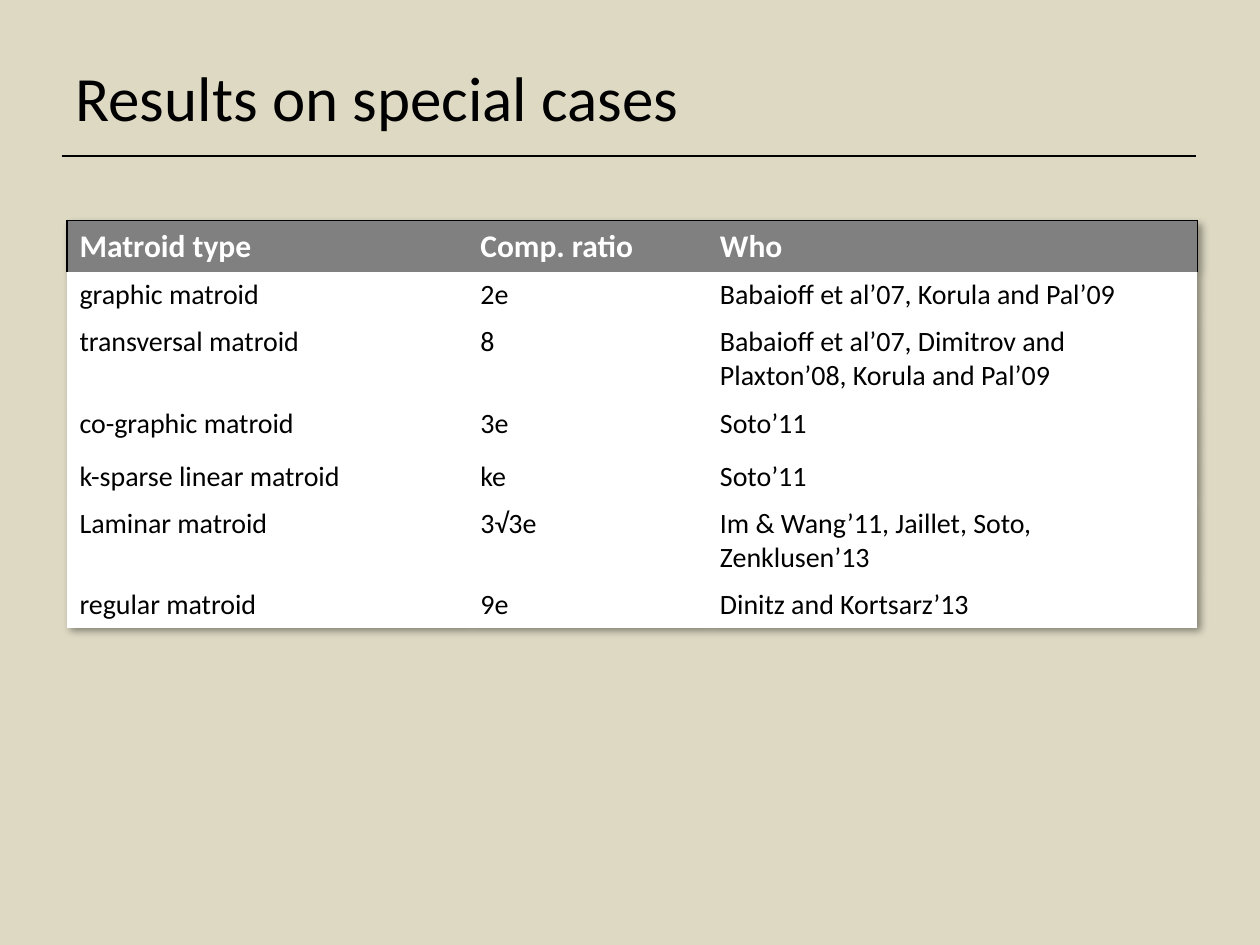
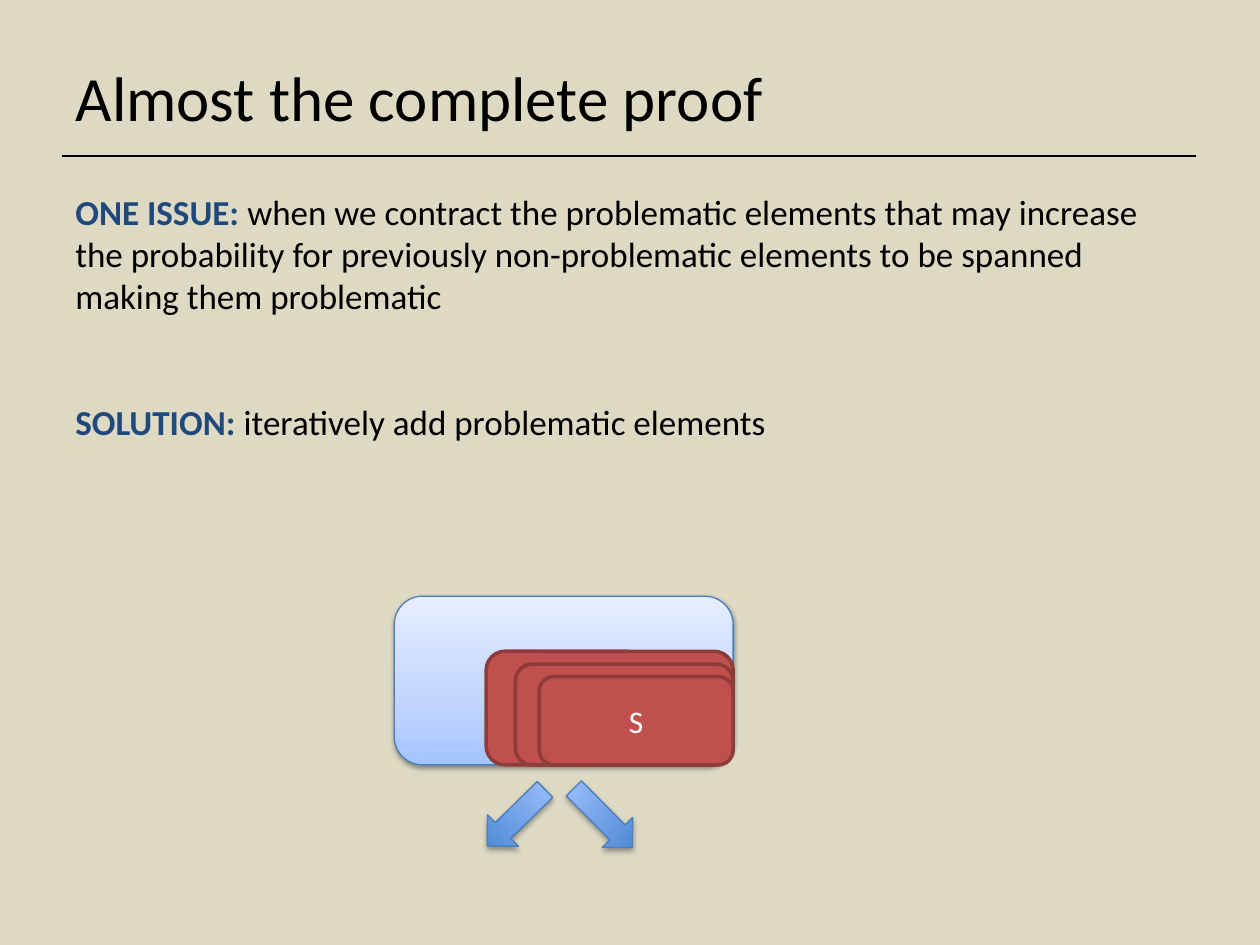
from dataclasses import dataclass

from lxml import etree
from pptx import Presentation
from pptx import util as u
from pptx.dml import color as dc
from pptx.enum import shapes as es, text as et
from pptx.oxml import ns

Cm, Pt = u.Cm, u.Pt
FONT = "Calibri"
HUES = {
    "sand": "DDD9C3", "ink": "000000", "white": "FFFFFF", "grey": "808080",
    "navy": "1F497D", "edge": "4B7EBC", "red": "C0504D", "rim": "8E3B39",
    "pale": "E6EEFF", "mist": "BFD4FF", "sky": "A4C4FF", "blue": "3F80CE",
}
PLAIN = "{2D5ABB26-0587-4C30-8999-92F81FD0307C}"  # table style without grid


@dataclass(frozen=True)
class Shade:
    alpha: int
    blur: float
    dist: float
    angle: int


@dataclass(frozen=True)
class Look:
    stops: tuple
    line: str
    width: float
    shade: Shade | None = None


@dataclass(frozen=True)
class Box:
    wide: float
    high: float
    look: Look
    text: str = ""


@dataclass(frozen=True)
class Arrow:
    left: float
    top: float
    wide: float
    high: float
    turn: float


# Looks of the diagram parts
GROUND = Look(((0, "sky"), (35, "mist"), (100, "pale")), "edge", 0.75,
              Shade(38, 3.1, 1.6, 90))
POINTER = Look(((0, "blue"), (100, "sky")), "edge", 0.75,
               Shade(35, 3.1, 1.8, 90))
LAYER = Look(((0, "red"),), "rim", 2)

# Content
HEAD = ("Matroid type", "Comp. ratio", "Who")
CASES = (
    ("graphic matroid", "2e", "Babaioff et al’07, Korula and Pal’09"),
    ("transversal matroid", "8",
     "Babaioff et al’07, Dimitrov and Plaxton’08, Korula and Pal’09"),
    ("co-graphic matroid", "3e", "Soto’11"),
    ("k-sparse linear matroid", "ke", "Soto’11"),
    ("Laminar matroid", "3√3e", "Im & Wang’11, Jaillet, Soto, Zenklusen’13"),
    ("regular matroid", "9e", "Dinitz and Kortsarz’13"),
)
COLS = (8.08, 4.83, 9.88)
ROWS = (1.03, 0.94, 1.64, 1.07, 0.94, 1.64, 0.94)
POINTS = (
    ("ONE ISSUE:", " when we contract the problematic elements that may "
     "increase the probability for previously non-problematic elements to be "
     "spanned making them problematic"),
    ("SOLUTION:", " iteratively add problematic elements"),
)
CORNER = (14.78, 15.42)  # right and bottom edge shared by the nested boxes
NEST = (Box(6.83, 3.4, GROUND), Box(4.98, 2.29, LAYER),
        Box(4.39, 2.03, LAYER), Box(3.91, 1.78, LAYER, "S"))
ARROWS = (Arrow(9.96, 15.67, 0.89, 1.63, 45.7),
          Arrow(11.73, 15.65, 0.86, 1.68, 315.2))


def rgb(hue: str) -> dc.RGBColor:
    return dc.RGBColor.from_string(HUES[hue])


def add(node, tag: str, **attrs):
    """Append a child element with the given attributes."""
    return etree.SubElement(node, ns.qn(tag),
                            {key: str(val) for key, val in attrs.items()})


def style(font, size: float, hue: str, bold: bool = False) -> None:
    form = {"name": FONT, "size": Pt(size), "bold": bold}
    for key, val in form.items():
        setattr(font, key, val)
    font.color.rgb = rgb(hue)


def drop(node, shade: Shade) -> None:
    """Put an outer shadow into an effect list."""
    cast = add(node, "a:outerShdw", blurRad=Pt(shade.blur),
               dist=Pt(shade.dist), dir=shade.angle * 60000,
               algn="ctr", rotWithShape=0)
    tint = add(cast, "a:srgbClr", val=HUES["ink"])
    add(tint, "a:alpha", val=shade.alpha * 1000)


def paint(shape, look: Look) -> None:
    """Apply fill, outline and shadow."""
    if len(look.stops) == 1:
        shape.fill.solid()
        shape.fill.fore_color.rgb = rgb(look.stops[0][1])
    else:
        shape.fill.gradient()
        shape.fill.gradient_angle = 90
        ramp = shape._element.spPr.find(".//" + ns.qn("a:gsLst"))
        for stop in list(ramp):
            ramp.remove(stop)
        for pos, hue in look.stops:
            stop = add(ramp, "a:gs", pos=pos * 1000)
            add(stop, "a:srgbClr", val=HUES[hue])
    shape.line.color.rgb = rgb(look.line)
    shape.line.width = Pt(look.width)
    shape.shadow.inherit = False
    if look.shade:
        drop(shape._element.spPr.find(ns.qn("a:effectLst")), look.shade)


def start(deck, title: str):
    """Add a slide with its title and the rule below it."""
    slide = deck.slides.add_slide(deck.slide_layouts[5])
    head = slide.shapes.title
    place = {"left": 1.27, "top": 0.76, "width": 22.86, "height": 2.36}
    for key, val in place.items():
        setattr(head, key, Cm(val))
    frame = head.text_frame
    frame.text = title
    frame.auto_size = et.MSO_AUTO_SIZE.NONE
    frame.vertical_anchor = et.MSO_ANCHOR.MIDDLE
    frame.paragraphs[0].alignment = et.PP_ALIGN.LEFT
    style(frame.paragraphs[0].runs[0].font, 36, "ink")

    rule = slide.shapes.add_connector(es.MSO_CONNECTOR.STRAIGHT, Cm(1.24),
                                      Cm(3.15), Cm(24.1), Cm(3.15))
    rule.line.color.rgb = rgb("ink")
    rule.line.width = Pt(1)
    add(rule._element.spPr, "a:effectLst")
    return slide


def edge(cell, side: str) -> None:
    """Draw a thin border; call before the cell gets its fill."""
    line = add(cell._tc.get_or_add_tcPr(), f"a:ln{side}", w=Pt(0.75))
    add(add(line, "a:solidFill"), "a:srgbClr", val=HUES["ink"])


def grid(slide) -> None:
    """Table of the special cases."""
    table = slide.shapes.add_table(
        len(ROWS), len(COLS), Cm(1.35), Cm(4.45),
        Cm(sum(COLS)), Cm(sum(ROWS))).table
    props = table._tbl.tblPr
    mark = props.find(ns.qn("a:tableStyleId"))
    mark.text = PLAIN
    glow = add(props, "a:effectLst")
    drop(glow, Shade(40, 4, 3, 45))
    mark.addprevious(glow)
    for col, wide in zip(table.columns, COLS):
        col.width = Cm(wide)
    for row, high in zip(table.rows, ROWS):
        row.height = Cm(high)

    sides = ("LT", "T", "RT")
    for y, texts in enumerate((HEAD, *CASES)):
        top = y == 0
        for x, words in enumerate(texts):
            cell = table.cell(y, x)
            for side in sides[x] if top else "":
                edge(cell, side)
            cell.fill.solid()
            cell.fill.fore_color.rgb = rgb("grey" if top else "white")
            cell.text = words
            style(cell.text_frame.paragraphs[0].runs[0].font,
                  18 if top else 16, "white" if top else "ink", top)


def points(slide) -> None:
    """Issue and solution."""
    frame = slide.shapes.add_textbox(Cm(1.27), Cm(3.71), Cm(22.86),
                                     Cm(7.32)).text_frame
    frame.word_wrap = True
    for num, (label, words) in enumerate(POINTS):
        para = frame.add_paragraph() if num else frame.paragraphs[0]
        if num:
            para.space_before = Pt(48)
        for part, hue, bold in ((label, "navy", True), (words, "ink", False)):
            run = para.add_run()
            run.text = part
            style(run.font, 20, hue, bold)


def nest(slide) -> None:
    """Boxes that grow out of one corner."""
    right, base = CORNER
    for box in NEST:
        shape = slide.shapes.add_shape(
            es.MSO_SHAPE.ROUNDED_RECTANGLE, Cm(right - box.wide),
            Cm(base - box.high), Cm(box.wide), Cm(box.high))
        paint(shape, box.look)
        if box.text:
            frame = shape.text_frame
            frame.text = box.text
            frame.vertical_anchor = et.MSO_ANCHOR.MIDDLE
            frame.paragraphs[0].alignment = et.PP_ALIGN.CENTER
            style(frame.paragraphs[0].runs[0].font, 18, "white")


def split(slide) -> None:
    """Arrows below the boxes."""
    for arrow in ARROWS:
        shape = slide.shapes.add_shape(
            es.MSO_SHAPE.DOWN_ARROW, Cm(arrow.left), Cm(arrow.top),
            Cm(arrow.wide), Cm(arrow.high))
        shape.rotation = arrow.turn
        paint(shape, POINTER)


def main() -> None:
    deck = Presentation()
    deck.slide_width, deck.slide_height = Cm(25.4), Cm(19.05)
    back = deck.slide_master.background.fill
    back.solid()
    back.fore_color.rgb = rgb("sand")

    grid(start(deck, "Results on special cases"))

    proof = start(deck, "Almost the complete proof")
    points(proof)
    nest(proof)
    split(proof)

    deck.save("out.pptx")


if __name__ == "__main__":
    main()
